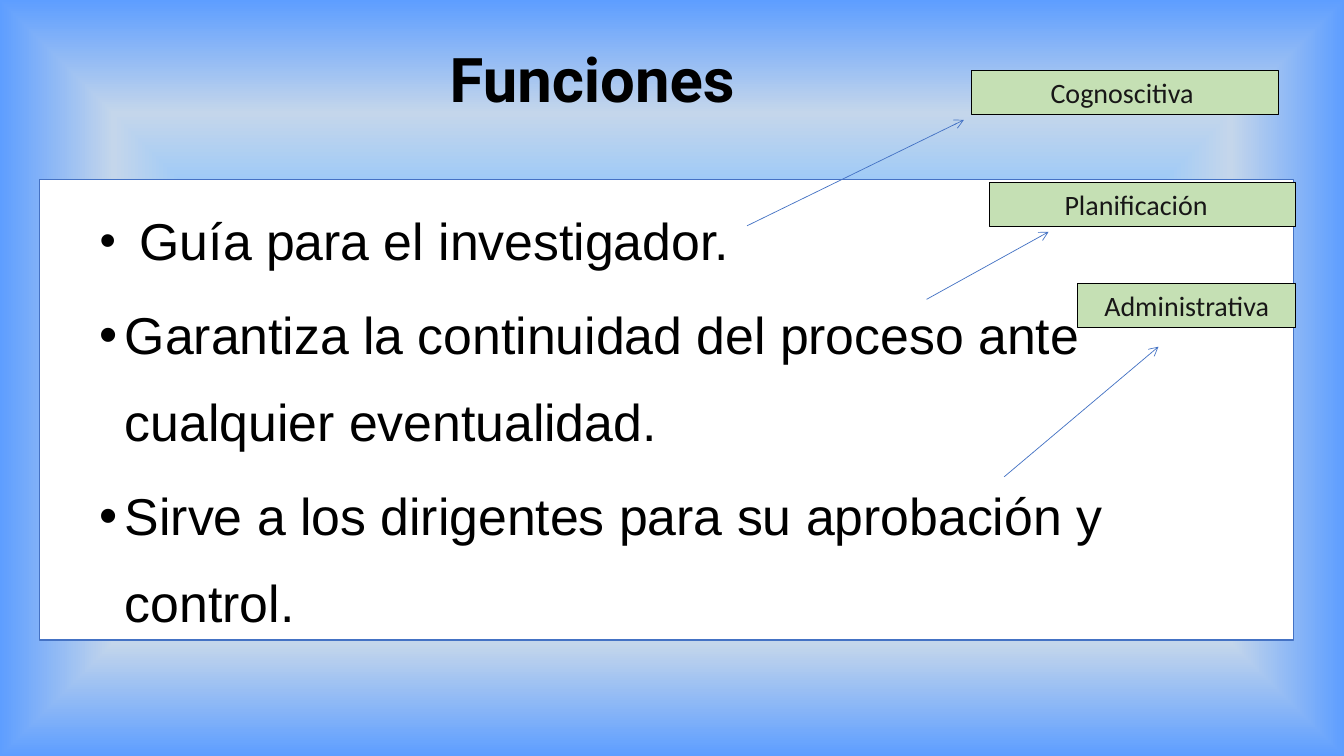
"""Build the slide on the functions of a research plan."""
from dataclasses import dataclass

from lxml.etree import SubElement
from pptx import Presentation
from pptx.dml.color import RGBColor as Rgb
from pptx.enum.shapes import MSO_CONNECTOR as Link, MSO_SHAPE as Shape
from pptx.enum.text import MSO_ANCHOR as Anchor, MSO_AUTO_SIZE as Fit, PP_ALIGN as Align
from pptx.oxml.ns import qn
from pptx.util import Inches, Pt

TITLE = "Funciones"
POINTS = [
    [(" ", "DejaVu Sans", 33.3), ("Guía para el investigador.", "Arial", 37)],
    [("Garantiza la continuidad del proceso ante cualquier eventualidad.", "Arial", 37)],
    [("Sirve a los dirigentes para su aprobación y control.", "Arial", 37)],
]
LABELS = [
    ("Cognoscitiva", 9.64, 0.7, 3.04, 0.06),
    ("Planificación", 9.81, 1.81, 3.04, 0.12),
    ("Administrativa", 10.69, 2.81, 2.16, 0),
]
ARROWS = [
    (7.41, 2.24, 9.56, 1.19),
    (9.19, 2.97, 10.4, 2.3),
    (9.96, 4.73, 11.49, 3.44),
]
GLOW = [(40, "85C2FF"), (70, "C4D6EB"), (100, "5E9EFF")]


@dataclass
class Theme:
    """Colours, fonts and sizes."""
    ink: str = "000000"
    dark: str = "181717"
    blue: str = "4472C4"
    green: str = "C5E0B4"
    white: str = "FFFFFF"
    head: str = "Roboto"
    tag: str = "Calibri"
    big: float = 44
    small: float = 20


LOOK = Theme()


def write(para, runs, color=LOOK.ink, bold=False, align=Align.LEFT, gap=1.0, before=0):
    """Fill a paragraph with (text, font, size) runs."""
    para.alignment, para.line_spacing, para.space_before = align, gap, Pt(before)
    for text, name, size in runs:
        run = para.add_run()
        run.text = text
        font = run.font
        font.name, font.size, font.bold = name, Pt(size), bold
        font.color.rgb = Rgb.from_string(color)


def bullet(para):
    """Give a paragraph a hanging bullet."""
    props = para._p.get_or_add_pPr()
    props.set("marL", str(Inches(0.75)))
    props.set("indent", str(Inches(-0.25)))
    SubElement(props, qn("a:buFont")).set("typeface", "Arial")
    SubElement(props, qn("a:buChar")).set("char", "•")


def box(slide, place, fill, line):
    """Add a filled rectangle and return its shape."""
    rect = slide.shapes.add_shape(Shape.RECTANGLE, *map(Inches, place))
    rect.shadow.inherit = False
    rect.fill.solid()
    rect.fill.fore_color.rgb = Rgb.from_string(fill)
    rect.line.color.rgb = Rgb.from_string(line)
    rect.line.width = Pt(0.75)
    rect.text_frame.word_wrap = True
    rect.text_frame.vertical_anchor = Anchor.TOP
    return rect


def arrow(slide, ends):
    """Add a thin line with an open arrowhead."""
    line = slide.shapes.add_connector(Link.STRAIGHT, *map(Inches, ends))
    line.line.color.rgb = Rgb.from_string(LOOK.blue)
    line.line.width = Pt(0.5)
    SubElement(line.line._get_or_add_ln(), qn("a:tailEnd")).set("type", "arrow")
    SubElement(line._element.spPr, qn("a:effectLst"))


def backdrop(slide):
    """Paint the gradient that glows from the centre."""
    fill = slide.background.fill
    fill.gradient()
    grad = next(slide._element.iter(qn("a:gradFill")))
    for child in list(grad):
        grad.remove(child)
    stops = SubElement(grad, qn("a:gsLst"))
    for pos, color in GLOW:
        stop = SubElement(stops, qn("a:gs"), pos=str(pos * 1000))
        SubElement(stop, qn("a:srgbClr"), val=color)
    way = SubElement(grad, qn("a:path"))
    way.set("path", "shape")
    SubElement(way, qn("a:fillToRect"), {side: "50000" for side in "ltrb"})


def main():
    """Assemble and save the slide."""
    deck = Presentation()
    deck.slide_width, deck.slide_height = Inches(13.33), Inches(7.5)
    slide = deck.slides.add_slide(deck.slide_layouts[5])
    backdrop(slide)

    title = slide.shapes.title
    title.left, title.top, title.width, title.height = map(Inches, (4.36, 0.4, 4.77, 0.83))
    frame = title.text_frame
    frame.auto_size, frame.vertical_anchor = Fit.NONE, Anchor.MIDDLE
    write(frame.paragraphs[0], [(TITLE, LOOK.head, LOOK.big)], bold=True, gap=0.9)

    frame = box(slide, (0.39, 1.78, 12.44, 4.57), LOOK.white, LOOK.blue).text_frame
    for i, runs in enumerate(POINTS):
        para = frame.add_paragraph() if i else frame.paragraphs[0]
        write(para, runs, gap=1.4, before=5 if i else 0)
        bullet(para)

    for ends, (text, left, top, width, pad) in zip(ARROWS, LABELS):
        arrow(slide, ends)
        frame = box(slide, (left, top, width, 0.44), LOOK.green, LOOK.ink).text_frame
        frame.margin_right = Inches(0.1 + pad)
        write(frame.paragraphs[0], [(text, LOOK.tag, LOOK.small)], LOOK.dark, align=Align.CENTER)

    deck.save("out.pptx")


if __name__ == "__main__":
    main()
